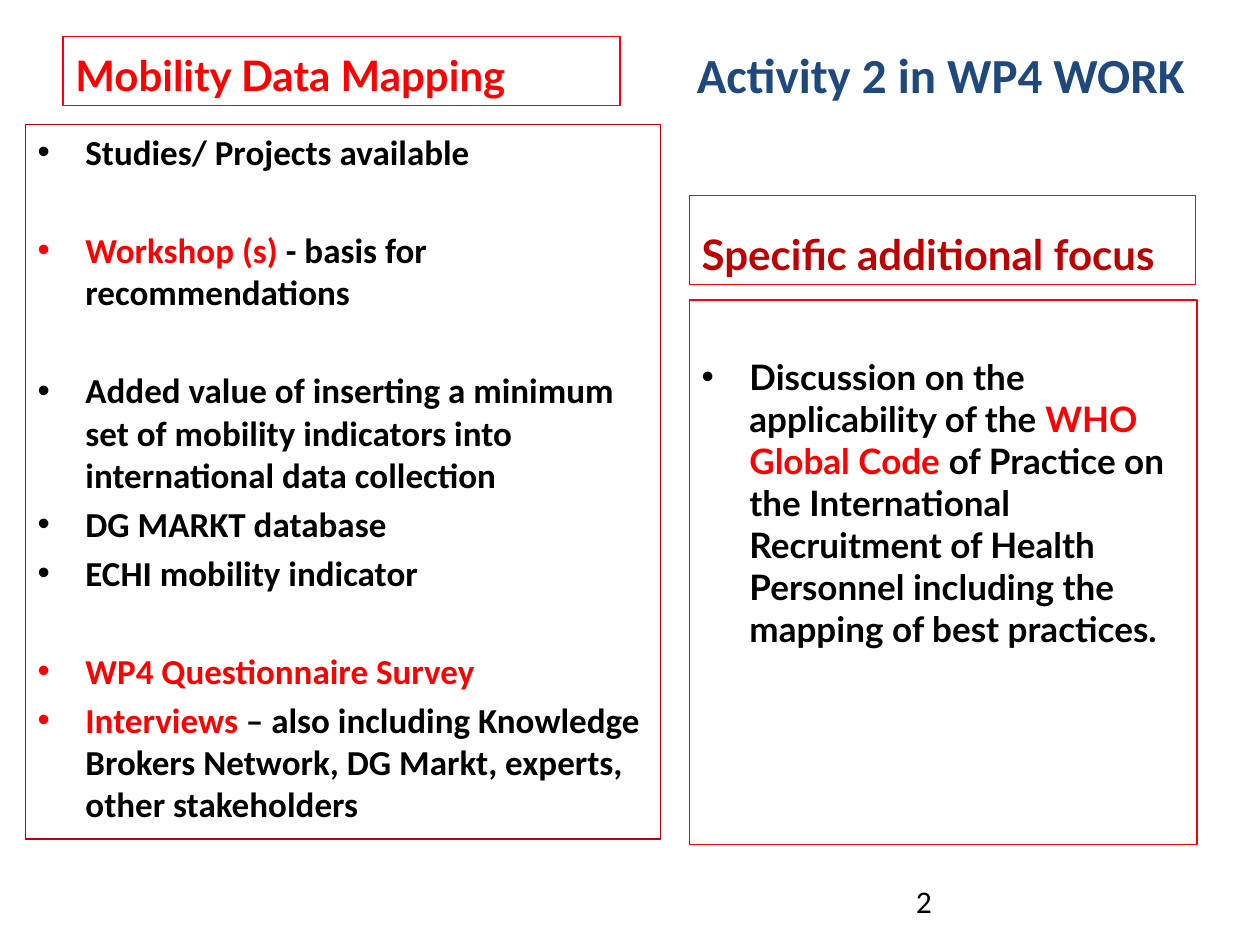
import pptx
import pptx.util
import pptx.dml.color
import pptx.enum.shapes
import pptx.enum.text
import pptx.oxml.ns
import lxml.etree

Inches = pptx.util.Inches
Pt = pptx.util.Pt
RGBColor = pptx.dml.color.RGBColor
ANCHOR = pptx.enum.text.MSO_ANCHOR
ALIGN = pptx.enum.text.PP_ALIGN

RED = RGBColor(0xFF, 0x00, 0x00)
DARK_RED = RGBColor(0xC0, 0x00, 0x00)
NAVY = RGBColor(0x1F, 0x49, 0x7D)
BLACK = RGBColor(0x00, 0x00, 0x00)


def add_frame(box, outline=None, anchor=ANCHOR.TOP):
    left, top, width, height = [Inches(length) for length in box]
    if outline is None:
        panel = slide.shapes.add_textbox(left, top, width, height)
    else:
        panel = slide.shapes.add_shape(
            pptx.enum.shapes.MSO_SHAPE.RECTANGLE, left, top, width, height)
        panel.shadow.inherit = False
        panel.fill.background()
        panel.line.color.rgb = outline
        panel.line.width = Pt(0.75)
    panel.text_frame.word_wrap = True
    panel.text_frame.vertical_anchor = anchor
    return panel.text_frame


def write(paragraph, parts, font, size, bold=True, align=ALIGN.LEFT):
    paragraph.alignment = align
    for text, color in parts:
        run = paragraph.add_run()
        run.text = text
        run.font.name = font
        run.font.size = Pt(size)
        run.font.bold = bold
        run.font.color.rgb = color


deck = pptx.Presentation()
deck.slide_width = Inches(10)
deck.slide_height = Inches(7.5)
slide = deck.slides.add_slide(deck.slide_layouts[6])

title = add_frame((0.5, 0.3, 9, 1.25))
write(title.paragraphs[0], [("Activity 2 in WP4 WORK", NAVY)], "Calibri", 28, align=ALIGN.RIGHT)

headings = [
    ("Mobility Data Mapping", (0.5, 0.29, 4.42, 0.55), RED),
    ("Specific additional focus", (5.47, 1.55, 4.02, 0.71), DARK_RED),
]
for heading, box, color in headings:
    frame = add_frame(box, RED, ANCHOR.BOTTOM)
    write(frame.paragraphs[0], [(heading, color)], "Lato", 24)

NEXT, NEW_GROUP = 4, 32
mapping_items = [
    (0, [("Studies/ Projects available", BLACK)]),
    (NEW_GROUP, [("Workshop (s)", RED), (" - basis for recommendations", BLACK)]),
    (NEW_GROUP, [("Added value of inserting a minimum set of mobility indicators "
                  "into international data collection", BLACK)]),
    (NEXT, [("DG MARKT database", BLACK)]),
    (NEXT, [("ECHI mobility indicator", BLACK)]),
    (NEW_GROUP, [("WP4 Questionnaire Survey", RED)]),
    (NEXT, [("Interviews ", RED),
            ("– also including Knowledge Brokers Network, DG Markt, experts, "
             "other stakeholders", BLACK)]),
]
focus_items = [
    (0, [("Discussion on the applicability of the ", BLACK),
         ("WHO Global Code ", RED),
         ("of Practice on the International Recruitment of Health Personnel "
          "including the mapping of best practices.", BLACK)]),
]
lists = [
    (mapping_items, (0.2, 0.99, 5.04, 5.67), DARK_RED, "Calibri", 0.05),
    (focus_items, (5.47, 2.38, 4.03, 4.32), RED, "Lato", 0.44),
]
for items, box, outline, font, top_margin in lists:
    frame = add_frame(box, outline)
    frame.margin_top = Inches(top_margin)
    for index, (space, parts) in enumerate(items):
        item = frame.add_paragraph() if index else frame.paragraphs[0]
        item.space_before = Pt(space)
        properties = item._p.get_or_add_pPr()
        properties.set("marL", str(Inches(0.38)))
        properties.set("indent", str(Inches(-0.38)))
        bullet_font = lxml.etree.SubElement(properties, pptx.oxml.ns.qn("a:buFont"))
        bullet_font.set("typeface", "Arial")
        bullet = lxml.etree.SubElement(properties, pptx.oxml.ns.qn("a:buChar"))
        bullet.set("char", "•")
        write(item, parts, font, 20)

page_number = add_frame((7.17, 6.95, 2.33, 0.4))
write(page_number.paragraphs[0], [("2", BLACK)], "Calibri", 18, bold=False)

deck.save("out.pptx")
